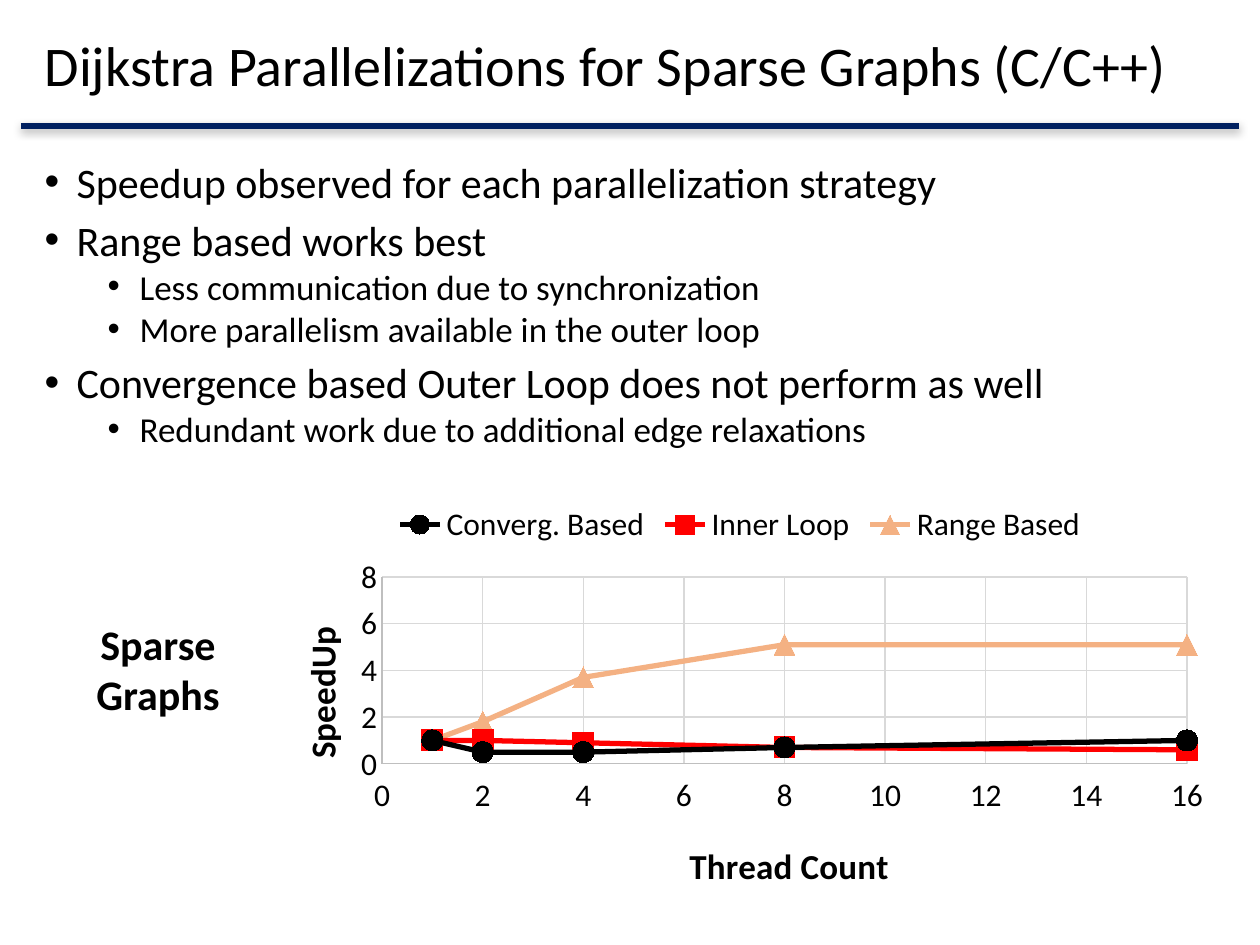
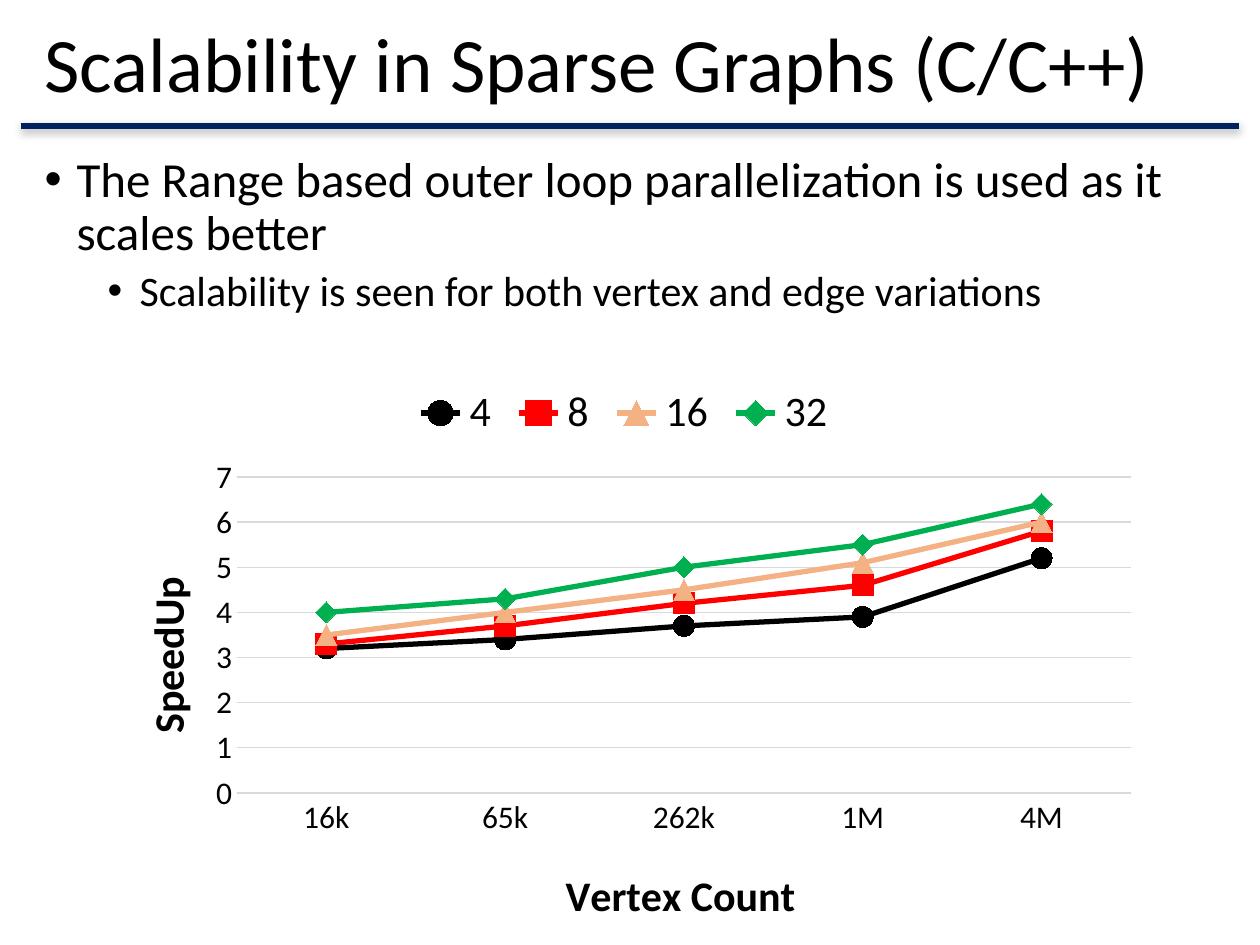
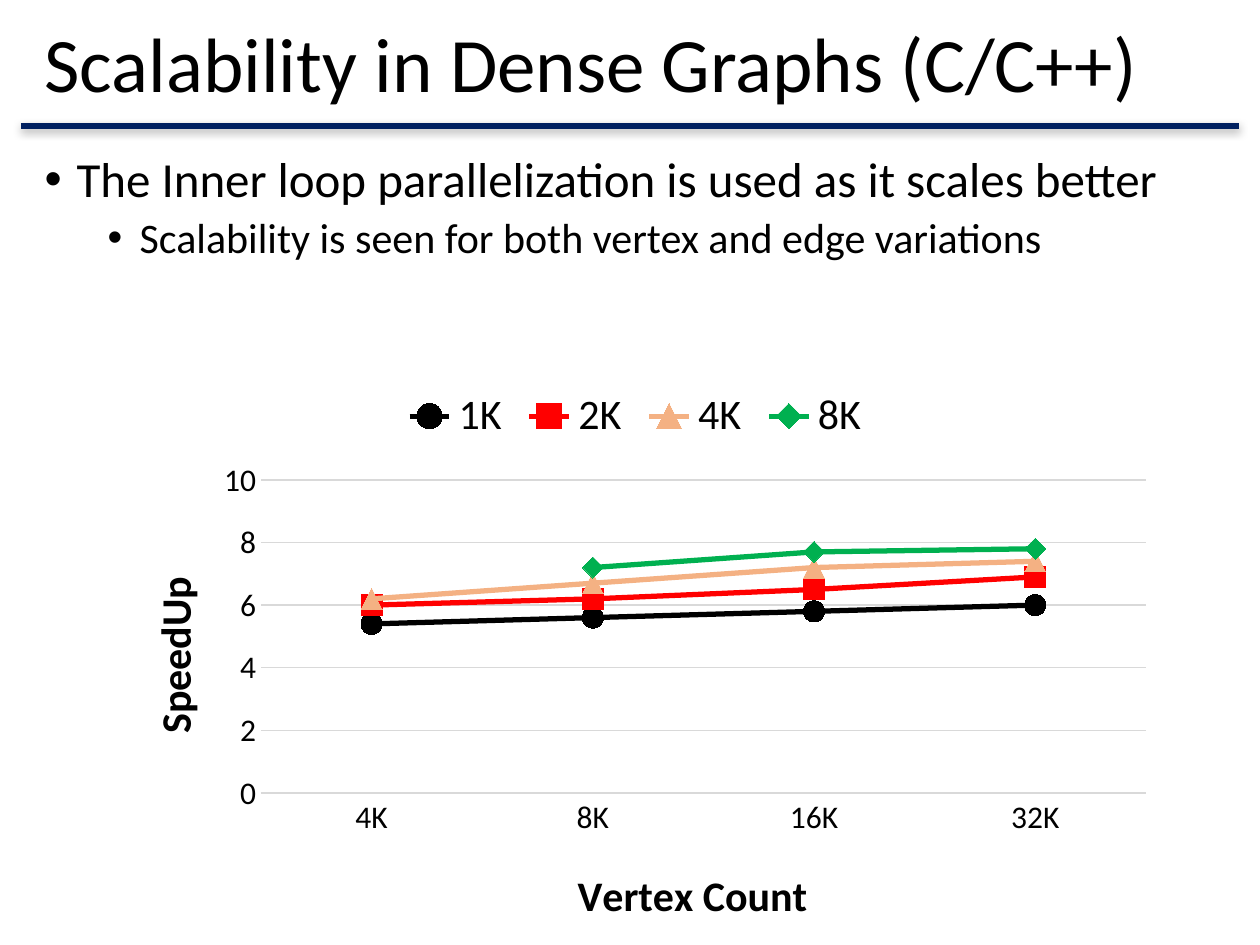
"""Build three slides on the speedup of parallel Dijkstra."""
from lxml.etree import SubElement
from pptx import Presentation
from pptx.chart.data import CategoryChartData, XyChartData
from pptx.dml.color import RGBColor
from pptx.enum.chart import (XL_CHART_TYPE, XL_LEGEND_POSITION, XL_MARKER_STYLE,
                             XL_TICK_LABEL_POSITION, XL_TICK_MARK)
from pptx.enum.shapes import MSO_CONNECTOR
from pptx.enum.text import MSO_ANCHOR, MSO_AUTO_SIZE, PP_ALIGN
from pptx.oxml import parse_xml
from pptx.oxml.ns import nsdecls, qn
from pptx.util import Pt

FONT = "Calibri"
BLACK = RGBColor(0x00, 0x00, 0x00)
NAVY = RGBColor(0x00, 0x20, 0x60)
RED = RGBColor(0xFF, 0x00, 0x00)
PEACH = RGBColor(0xF4, 0xB1, 0x83)
GREEN = RGBColor(0x00, 0xB0, 0x50)
SILVER = RGBColor(0xD9, 0xD9, 0xD9)
GRAY = RGBColor(0xBF, 0xBF, 0xBF)

STYLES = [
    (BLACK, XL_MARKER_STYLE.CIRCLE),
    (RED, XL_MARKER_STYLE.SQUARE),
    (PEACH, XL_MARKER_STYLE.TRIANGLE),
    (GREEN, XL_MARKER_STYLE.DIAMOND),
]
SCALE = 914400 / 126

SLIDES = [
    {
        "title": "Dijkstra Parallelizations for Sparse Graphs (C/C++)",
        "size": 32,
        "body": (32, 160, 1197, 323),
        "sizes": (24, 20),
        "lead": 0.8,
        "items": [
            (0, "Speedup observed for each parallelization strategy"),
            (0, "Range based works best"),
            (1, "Less communication due to synchronization"),
            (1, "More parallelism available in the outer loop"),
            (0, "Convergence based Outer Loop does not perform as well"),
            (1, "Redundant work due to additional edge relaxations"),
        ],
        "label": ("Sparse", "Graphs"),
        "chart": {
            "box": (256, 490, 968, 418),
            "plot": (382, 577, 805, 187),
            "names": [("Thread Count", 683, 835), ("SpeedUp", 291, 620)],
            "fonts": (20, 18),
            "scatter": True,
            "top": 8, "step": 2,
            "keys": [1, 2, 4, 8, 16],
            "rows": {
                "Converg. Based": [1, 0.5, 0.5, 0.7, 1],
                "Inner Loop": [1, 1, 0.9, 0.7, 0.6],
                "Range Based": [1, 1.8, 3.7, 5.1, 5.1],
            },
        },
    },
    {
        "title": "Scalability in Sparse Graphs (C/C++)",
        "size": 44,
        "body": (32, 149, 1197, 181),
        "sizes": (28, 24),
        "lead": 0.9,
        "items": [
            (0, "The Range based outer loop parallelization is used as it scales better"),
            (1, "Scalability is seen for both vertex and edge variations"),
        ],
        "chart": {
            "box": (96, 370, 1056, 575),
            "plot": (237, 477, 894, 316),
            "names": [("Vertex Count", 558, 860), ("SpeedUp", 132, 569)],
            "fonts": (24, 24),
            "scatter": False,
            "top": 7, "step": 1,
            "keys": ["16k", "65k", "262k", "1M", "4M"],
            "rows": {
                "4": [3.2, 3.4, 3.7, 3.9, 5.2],
                "8": [3.3, 3.7, 4.2, 4.6, 5.8],
                "16": [3.5, 4, 4.5, 5.1, 6],
                "32": [4, 4.3, 5, 5.5, 6.4],
            },
        },
    },
    {
        "title": "Scalability in Dense Graphs (C/C++)",
        "size": 44,
        "body": (32, 149, 1197, 181),
        "sizes": (28, 24),
        "lead": 0.9,
        "items": [
            (0, "The Inner loop parallelization is used as it scales better"),
            (1, "Scalability is seen for both vertex and edge variations"),
        ],
        "chart": {
            "box": (103, 373, 1065, 572),
            "plot": (261, 480, 885, 313),
            "names": [("Vertex Count", 570, 860), ("SpeedUp", 139, 569)],
            "fonts": (24, 24),
            "scatter": False,
            "top": 10, "step": 2,
            "keys": ["4K", "8K", "16K", "32K"],
            "rows": {
                "1K": [5.4, 5.6, 5.8, 6],
                "2K": [6, 6.2, 6.5, 6.9],
                "4K": [6.2, 6.7, 7.2, 7.4],
                "8K": [None, 7.2, 7.7, 7.8],
            },
        },
    },
]


def px(num):
    return round(num * SCALE)


def place(shape, box):
    shape.left, shape.top, shape.width, shape.height = map(px, box)


def style(font, size, bold=False):
    font.name, font.size, font.bold = FONT, Pt(size), bold
    font.color.rgb = BLACK


def write(para, text, size, bold=False):
    run = para.add_run()
    run.text = text
    style(run.font, size, bold)


def head(slide, text, size):
    shape = slide.shapes.title
    place(shape, (32, 10, 1155, 116))
    frame = shape.text_frame
    frame.auto_size = MSO_AUTO_SIZE.NONE
    frame.vertical_anchor = MSO_ANCHOR.MIDDLE
    para = frame.paragraphs[0]
    para.alignment = PP_ALIGN.LEFT
    para.line_spacing = 0.9
    write(para, text, size)


def rule(slide):
    line = slide.shapes.add_connector(
        MSO_CONNECTOR.STRAIGHT, px(21), px(126), px(1239), px(126))
    line.line.color.rgb = NAVY
    line.line.width = Pt(3)
    line._element.spPr.append(parse_xml(
        f'<a:effectLst {nsdecls("a")}><a:outerShdw blurRad="63500" dist="22860" '
        'dir="5400000" rotWithShape="0"><a:srgbClr val="000000">'
        '<a:alpha val="35000"/></a:srgbClr></a:outerShdw></a:effectLst>'))


def bullets(slide, spec):
    shape = slide.placeholders[1]
    place(shape, spec["body"])
    frame = shape.text_frame
    frame.auto_size = MSO_AUTO_SIZE.NONE
    for num, (level, text) in enumerate(spec["items"]):
        para = frame.add_paragraph() if num else frame.paragraphs[0]
        props = para._p.get_or_add_pPr()
        props.set("marL", str(px(95 if level else 32)))
        props.set("indent", str(px(-32)))
        SubElement(props, qn("a:buFont")).set("typeface", "Arial")
        SubElement(props, qn("a:buChar")).set("char", "•")
        para.level = level
        para.line_spacing = spec["lead"]
        para.space_before = Pt((5 if level else 10) if num else 0)
        write(para, text, spec["sizes"][level])


def label(slide, lines):
    shape = slide.shapes.add_textbox(*map(px, (83, 612, 150, 115)))
    frame = shape.text_frame
    frame.word_wrap = False
    para = frame.paragraphs[0]
    para.alignment = PP_ALIGN.CENTER
    for num, text in enumerate(lines):
        if num:
            para.add_line_break()
        write(para, text, 24, True)


def pin(host, box, spot):
    """Fix a chart part at a spot given in slide px."""
    node = host.find(qn("c:layout"))
    if node is None:
        node = host.makeelement(qn("c:layout"))
        host.insert(0, node)
    for kid in list(node):
        node.remove(kid)
    left, top, wide, high = box
    parts = {"x": (spot[0] - left) / wide, "y": (spot[1] - top) / high}
    hold = SubElement(node, qn("c:manualLayout"))
    if len(spot) == 4:
        SubElement(hold, qn("c:layoutTarget")).set("val", "inner")
        parts.update(w=spot[2] / wide, h=spot[3] / high)
    for key in ("x", "y"):
        SubElement(hold, qn(f"c:{key}Mode")).set("val", "edge")
    for key, val in parts.items():
        SubElement(hold, qn(f"c:{key}")).set("val", f"{val:.4f}")


def axis_up(axis, info, name, upright):
    text, *spot = name
    axis.major_tick_mark = axis.minor_tick_mark = XL_TICK_MARK.NONE
    style(axis.tick_labels.font, 18)
    axis.has_major_gridlines = upright or info["scatter"]
    if axis.has_major_gridlines:
        grid = axis.major_gridlines.format.line
        grid.color.rgb, grid.width = SILVER, Pt(0.75)
    edge = axis.format.line
    if upright and not info["scatter"]:
        edge.fill.background()
    else:
        edge.color.rgb = GRAY if info["scatter"] else SILVER
        edge.width = Pt(0.75)
    title = axis.axis_title
    write(title.text_frame.paragraphs[0], text, info["fonts"][0], True)
    if upright:
        frame = title._element.find(".//" + qn("a:bodyPr"))
        frame.set("rot", "-5400000")
        frame.set("vert", "horz")
    pin(title._element, info["box"], spot)


def graph(slide, info):
    if info["scatter"]:
        kind, data = XL_CHART_TYPE.XY_SCATTER_SMOOTH, XyChartData()
        for name, vals in info["rows"].items():
            row = data.add_series(name)
            for key, val in zip(info["keys"], vals):
                row.add_data_point(key, val)
    else:
        kind, data = XL_CHART_TYPE.LINE_MARKERS, CategoryChartData()
        data.categories = info["keys"]
        for name, vals in info["rows"].items():
            data.add_series(name, vals)
    chart = slide.shapes.add_chart(kind, *map(px, info["box"]), data).chart
    style(chart.font, 10)
    chart.has_title = False
    chart.has_legend = True
    chart.legend.position = XL_LEGEND_POSITION.TOP
    chart.legend.include_in_layout = False
    style(chart.legend.font, info["fonts"][1])
    plot = chart.plots[0]
    plot.vary_by_categories = False
    for row, (color, mark) in zip(plot.series, STYLES):
        row.smooth = info["scatter"]
        row.format.line.color.rgb, row.format.line.width = color, Pt(3)
        row.marker.style, row.marker.size = mark, 12
        row.marker.format.fill.solid()
        row.marker.format.fill.fore_color.rgb = color
        row.marker.format.line.color.rgb = color
    flat, tall = chart.category_axis, chart.value_axis
    tall.minimum_scale, tall.maximum_scale = 0, info["top"]
    tall.major_unit = info["step"]
    if info["scatter"]:
        flat.minimum_scale, flat.maximum_scale = 0, 16
        flat.major_unit = 2
        flat.tick_label_position = XL_TICK_LABEL_POSITION.LOW
    axis_up(flat, info, info["names"][0], False)
    axis_up(tall, info, info["names"][1], True)
    area = chart._chartSpace.find(".//" + qn("c:plotArea"))
    pin(area, info["box"], info["plot"])


def main():
    deck = Presentation()
    deck.slide_width, deck.slide_height = px(1260), px(945)
    for spec in SLIDES:
        slide = deck.slides.add_slide(deck.slide_layouts[1])
        rule(slide)
        head(slide, spec["title"], spec["size"])
        graph(slide, spec["chart"])
        if "label" in spec:
            label(slide, spec["label"])
        bullets(slide, spec)
    deck.save("out.pptx")


if __name__ == "__main__":
    main()
